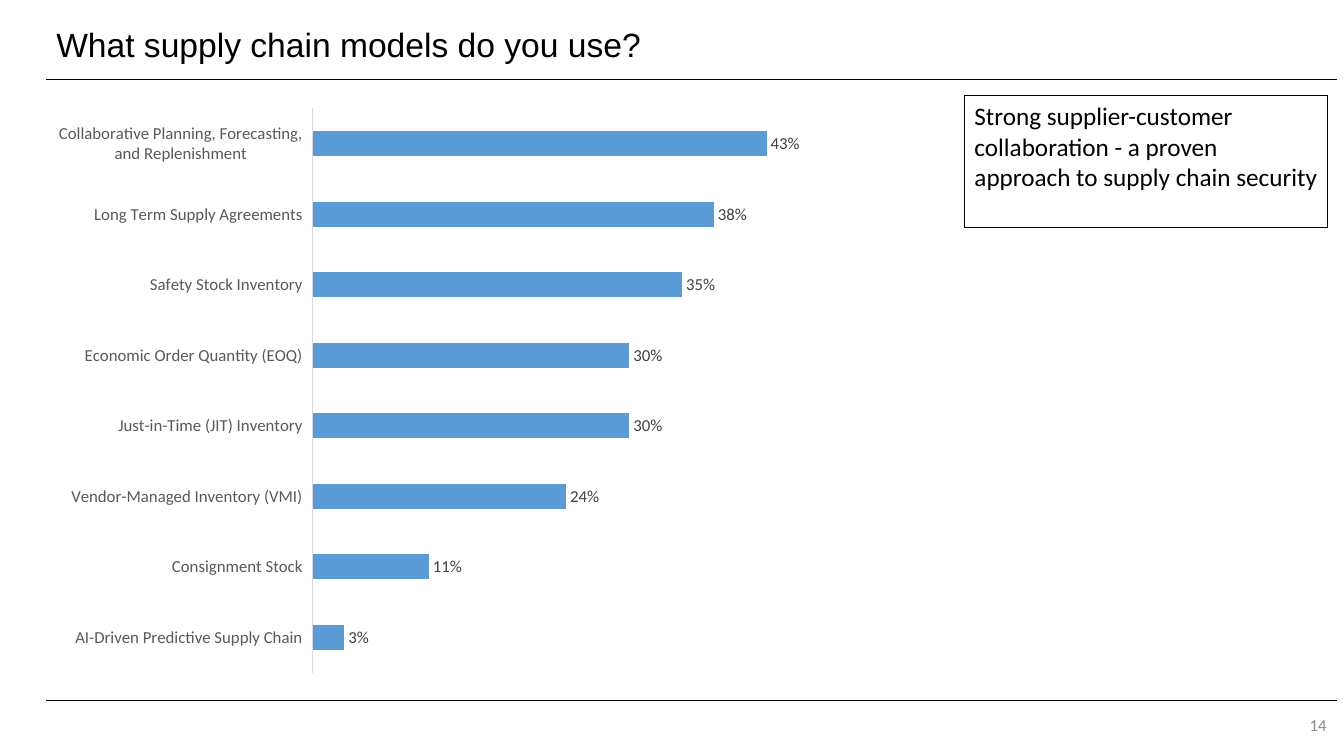
from lxml import etree
from pptx import Presentation
from pptx.chart.data import CategoryChartData
from pptx.dml.color import RGBColor
from pptx.enum.chart import XL_CHART_TYPE, XL_LABEL_POSITION, XL_TICK_LABEL_POSITION, XL_TICK_MARK
from pptx.enum.shapes import MSO_CONNECTOR, MSO_SHAPE
from pptx.enum.text import MSO_ANCHOR, PP_ALIGN
from pptx.oxml.ns import qn
from pptx.util import Pt

SLIDE_WIDTH, SLIDE_HEIGHT = 960, 540
LEFT, RIGHT = 33.12, 954.72

MODEL_SHARES = {
    "AI-Driven Predictive Supply Chain": 0.03,
    "Consignment Stock": 0.11,
    "Vendor-Managed Inventory (VMI)": 0.24,
    "Just-in-Time (JIT) Inventory": 0.30,
    "Economic Order Quantity (EOQ)": 0.30,
    "Safety Stock Inventory": 0.35,
    "Long Term Supply Agreements": 0.38,
    "Collaborative Planning, Forecasting, and Replenishment": 0.43,
}


def color(value):
    return RGBColor.from_string(value)


def set_font(font, size, value, name="Calibri"):
    font.size, font.name = Pt(size), name
    font.color.rgb = color(value)


def write_text(shape, text, size, value, name="Calibri", anchor=MSO_ANCHOR.MIDDLE,
               align=PP_ALIGN.LEFT, spacing=None):
    frame = shape.text_frame
    frame.word_wrap = True
    frame.vertical_anchor = anchor
    frame.text = text
    paragraph = frame.paragraphs[0]
    paragraph.alignment = align
    if spacing:
        paragraph.line_spacing = spacing
    set_font(paragraph.runs[0].font, size, value, name)


def add_rule(slide, left, top, width):
    rule = slide.shapes.add_connector(
        MSO_CONNECTOR.STRAIGHT, Pt(left), Pt(top), Pt(left + width), Pt(top))
    rule.line.color.rgb = color("000000")
    rule.line.width = Pt(0.5)
    etree.SubElement(rule._element.spPr, qn("a:effectLst"))


def add_header(slide, left, top, width, height):
    title = slide.shapes.add_textbox(Pt(left), Pt(top), Pt(722), Pt(38.9))
    write_text(title, "What supply chain models do you use?", 24, "000000", "Arial", spacing=0.9)
    add_rule(slide, left, top + height, width)


def add_footer(slide, left, top, width, height):
    add_rule(slide, left, top, width)
    number_width = 276.5
    number = slide.shapes.add_textbox(
        Pt(left + width - number_width), Pt(top + 5), Pt(number_width), Pt(height - 5))
    write_text(number, "14", 12, "8C8C8C", align=PP_ALIGN.RIGHT)


def set_plot_layout(chart, x, y, w, h):
    """Fix the inner plot area as fractions of the chart."""
    plot_area = chart._chartSpace.chart.plotArea
    for old_layout in plot_area.findall(qn("c:layout")):
        plot_area.remove(old_layout)
    layout = etree.Element(qn("c:layout"))
    manual = etree.SubElement(layout, qn("c:manualLayout"))
    settings = {"layoutTarget": "inner", "xMode": "edge", "yMode": "edge",
                "x": x, "y": y, "w": w, "h": h}
    for tag, value in settings.items():
        etree.SubElement(manual, qn(f"c:{tag}")).set("val", str(value))
    plot_area.insert(0, layout)


def add_model_chart(slide, left, top, width, height):
    data = CategoryChartData(number_format="0%")
    data.categories = list(MODEL_SHARES)
    data.add_series("Series 1", list(MODEL_SHARES.values()))
    chart = slide.shapes.add_chart(
        XL_CHART_TYPE.BAR_CLUSTERED, Pt(left), Pt(top), Pt(width), Pt(height), data).chart
    chart.has_legend = False
    chart.has_title = False
    set_font(chart.font, 12, "000000")
    set_plot_layout(chart, 0.29, 0.02, 0.69, 0.96)

    # Axes
    category_axis = chart.category_axis
    category_axis.major_tick_mark = XL_TICK_MARK.NONE
    category_axis.tick_label_position = XL_TICK_LABEL_POSITION.LOW
    category_axis.format.line.color.rgb = color("D9D9D9")
    category_axis.format.line.width = Pt(0.75)
    set_font(category_axis.tick_labels.font, 12, "595959")
    value_axis = chart.value_axis
    value_axis.minimum_scale, value_axis.maximum_scale = 0, 0.6
    value_axis.major_unit = 0.2
    value_axis.has_major_gridlines = False
    value_axis.tick_labels.number_format = "0.00%"
    value_axis.tick_labels.number_format_is_linked = False
    value_axis.visible = False

    # Bars and their labels
    plot = chart.plots[0]
    plot.gap_width = 182
    plot.vary_by_categories = False
    series = plot.series[0]
    series.format.fill.solid()
    series.format.fill.fore_color.rgb = color("5B9BD5")
    labels = series.data_labels
    labels.show_value = True
    labels.position = XL_LABEL_POSITION.OUTSIDE_END
    labels.number_format = "0%"
    labels.number_format_is_linked = False
    set_font(labels.font, 12, "404040")


def add_callout(slide, left, top, width, height):
    callout = slide.shapes.add_shape(
        MSO_SHAPE.RECTANGLE, Pt(left), Pt(top), Pt(width), Pt(height))
    callout.shadow.inherit = False
    callout.fill.solid()
    callout.fill.fore_color.rgb = color("FFFFFF")
    callout.line.color.rgb = color("000000")
    callout.line.width = Pt(1)
    write_text(callout, "Strong supplier-customer collaboration - a proven approach "
               "to supply chain security", 18, "000000", anchor=MSO_ANCHOR.TOP)


def main():
    presentation = Presentation()
    presentation.slide_width, presentation.slide_height = Pt(SLIDE_WIDTH), Pt(SLIDE_HEIGHT)
    slide = presentation.slides.add_slide(presentation.slide_layouts[6])
    content_width = RIGHT - LEFT
    add_header(slide, LEFT, 13.7, content_width, 43.2)
    add_footer(slide, LEFT, 500.4, content_width, 29)
    add_model_chart(slide, LEFT, 69.1, 656, 419.8)
    add_callout(slide, 689, 68.4, 259.2, 94.3)
    presentation.save("out.pptx")


if __name__ == "__main__":
    main()
